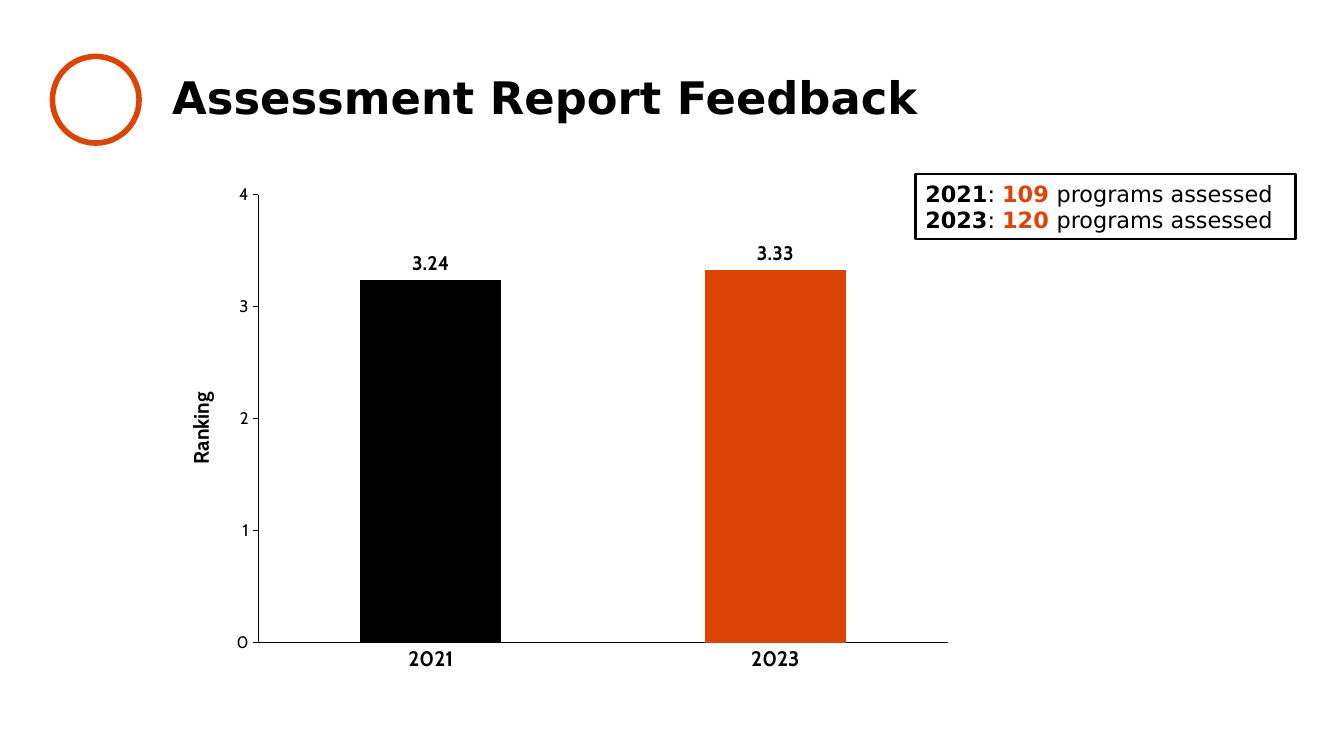
from dataclasses import dataclass

from lxml import etree
from pptx import Presentation, util as u
from pptx.chart.data import CategoryChartData
from pptx.dml.color import RGBColor
from pptx.enum import chart as charts, shapes, text
from pptx.oxml.ns import qn

PX = 9144  # EMU per px, 100 px to the inch


@dataclass(frozen=True)
class Theme:
    black: RGBColor = RGBColor(0x00, 0x00, 0x00)
    white: RGBColor = RGBColor(0xFF, 0xFF, 0xFF)
    orange: RGBColor = RGBColor(0xDC, 0x44, 0x05)
    text_font: str = "DejaVu Sans"
    chart_font: str = "Cabin"
    title_size: int = 32
    note_size: int = 16
    axis_size: int = 15
    label_size: int = 14
    tick_size: int = 12


THEME = Theme()


def px(*lengths):
    return [u.Emu(length * PX) for length in lengths]


def style_font(font, name, size, bold=None, color=THEME.black):
    font.name = name
    font.size = u.Pt(size)
    font.bold = bold
    font.color.rgb = color


def add_outline(slide, kind, box, color, width, fill=None):
    shape = slide.shapes.add_shape(kind, *px(*box))
    shape.shadow.inherit = False
    if fill is None:
        shape.fill.background()
    else:
        shape.fill.solid()
        shape.fill.fore_color.rgb = fill
    shape.line.color.rgb = color
    shape.line.width = u.Pt(width)
    return shape


def add_title(slide, box, wording):
    frame = slide.shapes.add_textbox(*px(*box)).text_frame
    frame.word_wrap = True
    frame.vertical_anchor = text.MSO_ANCHOR.MIDDLE
    paragraph = frame.paragraphs[0]
    paragraph.text = wording
    paragraph.line_spacing = 0.9
    style_font(paragraph.font, THEME.text_font, THEME.title_size, True)


def add_program_counts(slide, box, counts):
    """Add an outlined box with one line for each year."""
    shape = add_outline(slide, shapes.MSO_SHAPE.RECTANGLE, box, THEME.black, 1.5)
    frame = shape.text_frame
    frame.word_wrap = True
    for index, (year, count) in enumerate(counts):
        paragraph = frame.add_paragraph() if index else frame.paragraphs[0]
        paragraph.alignment = text.PP_ALIGN.LEFT
        pieces = [
            (year, True, THEME.black),
            (": ", False, THEME.black),
            (f"{count} ", True, THEME.orange),
            ("programs assessed", False, THEME.black),
        ]
        for wording, bold, color in pieces:
            run = paragraph.add_run()
            run.text = wording
            style_font(run.font, THEME.text_font, THEME.note_size, bold, color)


def style_axis(axis, size, bold, tick):
    axis.has_major_gridlines = False
    axis.major_tick_mark = tick
    axis.minor_tick_mark = charts.XL_TICK_MARK.NONE
    axis.format.line.color.rgb = THEME.black
    axis.format.line.width = u.Pt(0.75)
    style_font(axis.tick_labels.font, THEME.chart_font, size, bold)


def place_plot(chart, **fractions):
    """Fix the inner plot area, in fractions of the chart."""
    plot_area = chart.plots[0]._element.getparent()
    for old in plot_area.findall(qn("c:layout")):
        plot_area.remove(old)
    layout = etree.Element(qn("c:layout"))
    manual = etree.SubElement(layout, qn("c:manualLayout"))
    settings = {"layoutTarget": "inner", "xMode": "edge", "yMode": "edge", **fractions}
    for name, value in settings.items():
        etree.SubElement(manual, qn(f"c:{name}")).set("val", str(value))
    plot_area.insert(0, layout)


def add_ranking_chart(slide, box, rankings, colors):
    data = CategoryChartData()
    data.categories = list(rankings)
    data.add_series("Series 1", list(rankings.values()))
    kind = charts.XL_CHART_TYPE.COLUMN_CLUSTERED
    chart = slide.shapes.add_chart(kind, *px(*box), data).chart
    chart.has_legend = False
    chart.has_title = False
    style_font(chart.font, THEME.chart_font, 10)

    style_axis(chart.category_axis, THEME.axis_size, True, charts.XL_TICK_MARK.NONE)
    value_axis = chart.value_axis
    style_axis(value_axis, THEME.tick_size, None, charts.XL_TICK_MARK.OUTSIDE)
    value_axis.minimum_scale = 0
    value_axis.maximum_scale = 4
    value_axis.major_unit = 1
    value_axis.tick_labels.number_format = "0"
    value_axis.tick_labels.number_format_is_linked = False
    title_frame = value_axis.axis_title.text_frame
    title_frame.text = "Ranking"
    title_frame._txBody.bodyPr.set("rot", "-5400000")
    style_font(title_frame.paragraphs[0].font, THEME.chart_font, THEME.axis_size, True)

    plot = chart.plots[0]
    plot.gap_width = 145
    plot.vary_by_categories = False
    series = plot.series[0]
    for index, color in enumerate(colors):
        fill = series.points[index].format.fill
        fill.solid()
        fill.fore_color.rgb = color
    labels = series.data_labels
    labels.show_value = True
    labels.position = charts.XL_LABEL_POSITION.OUTSIDE_END
    style_font(labels.font, THEME.chart_font, THEME.label_size, True)
    place_plot(chart, x=0.12, y=0.04, w=0.86, h=0.88)


def main():
    presentation = Presentation()
    presentation.slide_width, presentation.slide_height = px(1333, 750)
    slide = presentation.slides.add_slide(presentation.slide_layouts[6])
    add_outline(slide, shapes.MSO_SHAPE.OVAL, (52, 56, 86, 86), THEME.orange, 4, THEME.white)
    add_title(slide, (161, 72, 1080, 54), "Assessment Report Feedback")
    add_ranking_chart(
        slide, (161, 173, 795, 505), {"2021": 3.24, "2023": 3.33}, (THEME.black, THEME.orange)
    )
    add_program_counts(slide, (908, 173, 377, 64), [("2021", 109), ("2023", 120)])
    presentation.save("out.pptx")


if __name__ == "__main__":
    main()
